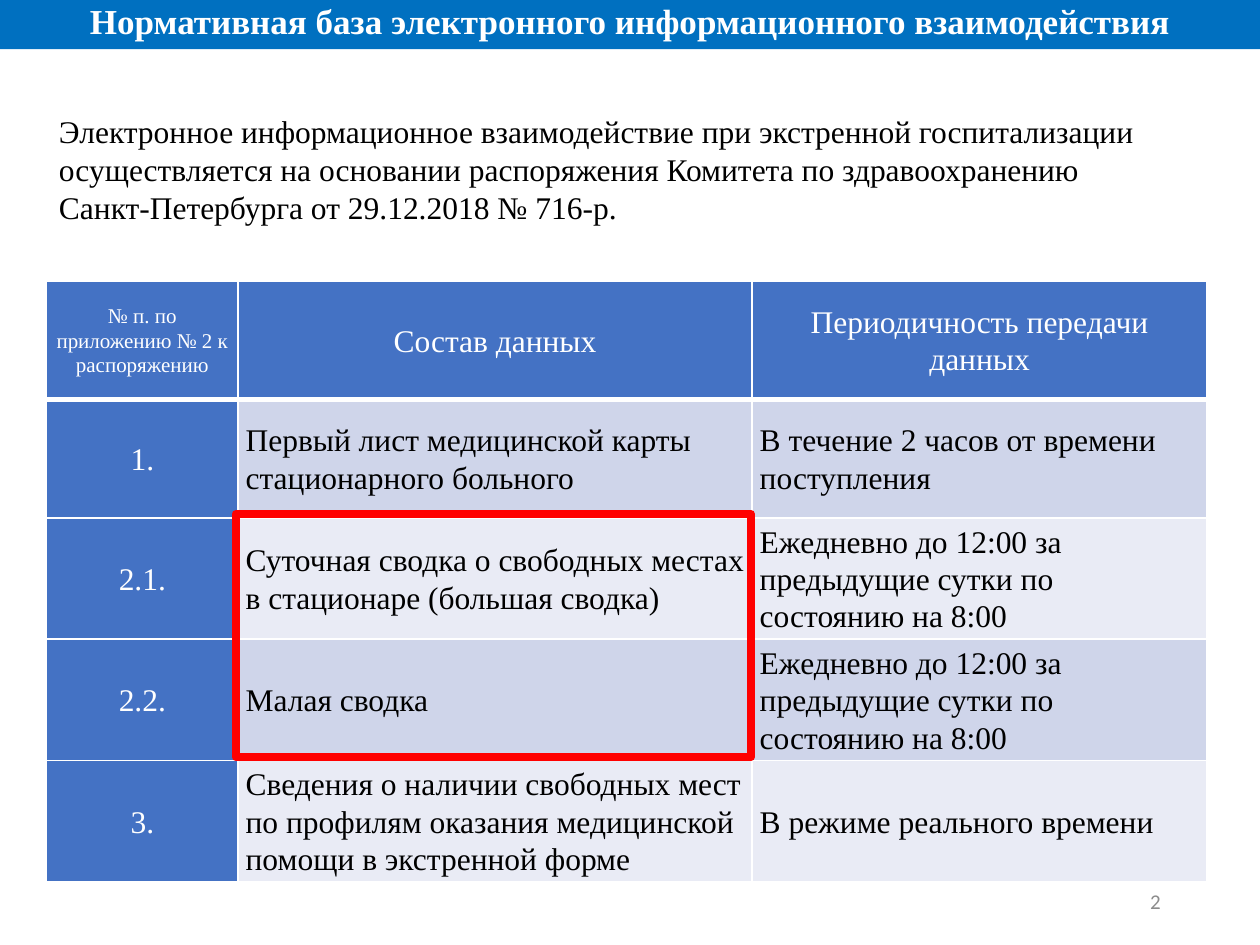
from lxml.etree import SubElement
from pptx import Presentation
from pptx.dml.color import RGBColor
from pptx.enum.shapes import MSO_SHAPE
from pptx.enum.text import MSO_ANCHOR, PP_ALIGN
from pptx.oxml.ns import qn
from pptx.util import Inches, Pt

COLORS = {
    "banner": "0070C0",
    "header": "4472C4",
    "dark_band": "CFD5EA",
    "light_band": "E9EBF5",
    "white": "FFFFFF",
    "black": "000000",
    "gray": "8C8C8C",
    "highlight": "FF0000",
}
SERIF = "Times New Roman"

COLUMN_WIDTHS = [1.52, 4.08, 3.61]
ROW_HEIGHT = 0.94
DAILY = "Ежедневно до 12:00 за предыдущие сутки по состоянию на 8:00"
ROWS = [
    ["№ п. по приложению № 2 к распоряжению", "Состав данных",
     "Периодичность передачи данных"],
    ["1.", "Первый лист медицинской карты стационарного больного",
     "В течение 2 часов от времени поступления"],
    ["2.1.", "Суточная сводка о свободных местах в стационаре (большая сводка)", DAILY],
    ["2.2.", "Малая сводка", DAILY],
    ["3.", "Сведения о наличии свободных мест по профилям оказания медицинской "
     "помощи в экстренной форме", "В режиме реального времени"],
]


def rgb(name):
    return RGBColor.from_string(COLORS[name])


def set_attributes(target, values):
    for name, value in values.items():
        setattr(target, name, value)


def add_cell_borders(cell, bottom_width):
    """Draw white borders; call before filling, as the fill must follow them."""
    properties = cell._tc.get_or_add_tcPr()
    widths = {"a:lnL": 1, "a:lnR": 1, "a:lnT": 1, "a:lnB": bottom_width}
    for tag, width in widths.items():
        line = SubElement(properties, qn(tag), w=str(Pt(width)))
        fill = SubElement(line, qn("a:solidFill"))
        SubElement(fill, qn("a:srgbClr"), val=COLORS["white"])


class SlideBuilder:
    def __init__(self, slide, font_name=SERIF, size=18):
        self.slide = slide
        self.font_name = font_name
        self.size = size

    def set_text(self, frame, text, color="black", size=None, bold=False,
                 font_name=None, paragraph_format=None):
        paragraph = frame.paragraphs[0]
        paragraph.text = text
        set_attributes(paragraph, paragraph_format or {})
        set_attributes(paragraph.font, {
            "name": font_name or self.font_name,
            "size": Pt(size or self.size),
            "bold": bold,
        })
        paragraph.font.color.rgb = rgb(color)

    def add_text(self, box, text, anchor=MSO_ANCHOR.TOP, **style):
        shape = self.slide.shapes.add_textbox(*map(Inches, box))
        set_attributes(shape.text_frame, {"word_wrap": True, "vertical_anchor": anchor})
        self.set_text(shape.text_frame, text, **style)

    def add_rectangle(self, box, fill=None, line=None, line_width=0):
        shape = self.slide.shapes.add_shape(MSO_SHAPE.RECTANGLE, *map(Inches, box))
        shape.shadow.inherit = False
        if fill:
            shape.fill.solid()
            shape.fill.fore_color.rgb = rgb(fill)
        else:
            shape.fill.background()
        if line:
            shape.line.color.rgb = rgb(line)
            shape.line.width = Pt(line_width)
        else:
            shape.line.fill.background()
        return shape

    def add_banner(self, box, text):
        shape = self.add_rectangle(box, fill="banner")
        shape.text_frame.vertical_anchor = MSO_ANCHOR.TOP
        self.set_text(shape.text_frame, text, color="white", size=20, bold=True,
                      paragraph_format={"alignment": PP_ALIGN.CENTER})

    def add_table(self, left, top, rows, widths, row_height):
        table = self.slide.shapes.add_table(
            len(rows), len(widths), Inches(left), Inches(top),
            Inches(sum(widths)), Inches(row_height * len(rows))).table
        table.first_col = True
        for column, width in zip(table.columns, widths):
            column.width = Inches(width)
        for row_index, texts in enumerate(rows):
            table.rows[row_index].height = Inches(row_height)
            for column_index, text in enumerate(texts):
                self.fill_cell(table.cell(row_index, column_index), text,
                               row_index, column_index)

    def fill_cell(self, cell, text, row, column):
        is_heading = row == 0 or column == 0
        band = "dark_band" if row % 2 else "light_band"
        set_attributes(cell, {
            "vertical_anchor": MSO_ANCHOR.MIDDLE,
            "margin_left": Inches(0.06),
            "margin_right": Inches(0.06),
            "margin_top": 0,
            "margin_bottom": 0,
        })
        add_cell_borders(cell, bottom_width=3 if row == 0 else 1)
        cell.fill.solid()
        cell.fill.fore_color.rgb = rgb("header" if is_heading else band)
        self.set_text(cell.text_frame, text,
                      color="white" if is_heading else "black",
                      size=12 if row == column == 0 else None,
                      paragraph_format={
                          "alignment": PP_ALIGN.CENTER if is_heading else PP_ALIGN.LEFT,
                          "line_spacing": 1.07,
                          "space_after": Pt(8),
                      })


def main():
    presentation = Presentation()
    set_attributes(presentation, {"slide_width": Inches(10), "slide_height": Inches(7.5)})
    builder = SlideBuilder(presentation.slides.add_slide(presentation.slide_layouts[6]))

    builder.add_banner((0, -0.05, 10, 0.44),
                       "Нормативная база электронного информационного взаимодействия")
    builder.add_text((7.06, 6.95, 2.25, 0.4), "2", anchor=MSO_ANCHOR.MIDDLE,
                     color="gray", size=12, font_name="Calibri",
                     paragraph_format={"alignment": PP_ALIGN.RIGHT})
    builder.add_text(
        (0.37, 0.84, 8.76, 1.31),
        "Электронное информационное взаимодействие при экстренной госпитализации "
        "осуществляется на основании распоряжения Комитета по здравоохранению "
        "Санкт-Петербурга от 29.12.2018 № 716-р.")
    builder.add_table(0.37, 2.23, ROWS, COLUMN_WIDTHS, ROW_HEIGHT)
    builder.add_rectangle((1.87, 4.08, 4.09, 1.93), line="highlight", line_width=4.5)

    presentation.save("out.pptx")


if __name__ == "__main__":
    main()
